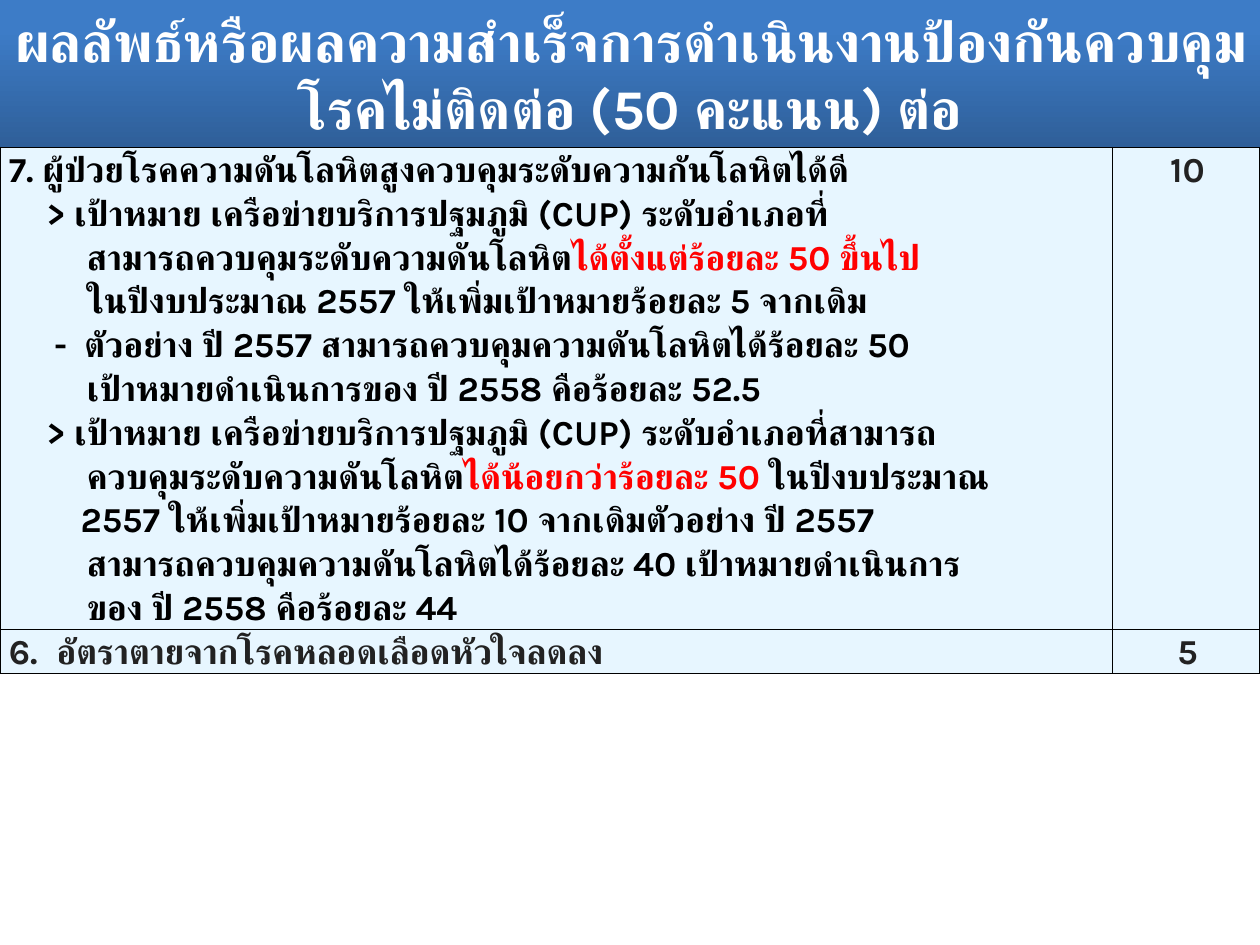
from lxml import etree
from pptx import Presentation, util as u
from pptx.dml.color import RGBColor
from pptx.enum import text
from pptx.oxml import ns

FONT = "Karla"
COLOURS = {"white": "FFFFFF", "black": "000000", "red": "FF0000", "grey": "222222",
           "cell": "E7F6FF", "dark blue": "2F5F99", "blue": "3D7CC7"}


def style_run(run, size, colour):
    run.font.name, run.font.size, run.font.bold = FONT, u.Pt(size), True
    run.font.color.rgb = RGBColor.from_string(COLOURS[colour])
    etree.SubElement(run.font._element, ns.qn("a:cs"), typeface=FONT)


def write_paragraph(paragraph, parts, left, hanging, colour):
    """Fill a table paragraph; every second part is highlighted in red."""
    paragraph.line_spacing = 1.07
    properties = paragraph._p.get_or_add_pPr()
    properties.set("marL", str(u.Inches(left)))
    properties.set("indent", str(-u.Inches(hanging)))
    for index, part in enumerate(parts):
        run = paragraph.add_run()
        run.text = part
        style_run(run, 20, "red" if index % 2 else colour)


presentation = Presentation()
presentation.slide_width, presentation.slide_height = u.Inches(10), u.Inches(7.5)
slide = presentation.slides.add_slide(presentation.slide_layouts[5])

# Title band
title_height = u.Inches(1.17)
title = slide.shapes.title
title.left, title.top = 0, 0
title.width, title.height = presentation.slide_width, title_height
title.shadow.inherit = False
title.fill.gradient()
title.fill.gradient_angle = 90
for stop, position, colour in zip(title.fill.gradient_stops, (0, 0.8), ("dark blue", "blue")):
    stop.position = position
    stop.color.rgb = RGBColor.from_string(COLOURS[colour])
frame = title.text_frame
frame.text = "ผลลัพธ์หรือผลความสำเร็จการดำเนินงานป้องกันควบคุมโรคไม่ติดต่อ (50 คะแนน) ต่อ"
frame.auto_size = text.MSO_AUTO_SIZE.NONE
frame.vertical_anchor = text.MSO_ANCHOR.MIDDLE
frame.paragraphs[0].alignment = text.PP_ALIGN.CENTER
style_run(frame.paragraphs[0].runs[0], 32, "white")

# Criteria and scores: (left indent, hanging indent, parts)
GOAL, BODY, EXAMPLE = (0.3, 0), (0.62, 0), (0.6, 0.24)
criteria = [
    ((0, 0), ["7. ผู้ป่วยโรคความดันโลหิตสูงควบคุมระดับความกันโลหิตได้ดี"]),
    (GOAL, ["> เป้าหมาย เครือข่ายบริการปฐมภูมิ (CUP) ระดับอำเภอที่"]),
    (BODY, ["สามารถควบคุมระดับความดันโลหิต", "ได้ตั้งแต่ร้อยละ 50 ขึ้นไป"]),
    (BODY, ["ในปีงบประมาณ 2557 ให้เพิ่มเป้าหมายร้อยละ 5 จากเดิม"]),
    (EXAMPLE, ["-\tตัวอย่าง ปี 2557 สามารถควบคุมความดันโลหิตได้ร้อยละ 50"]),
    (BODY, ["เป้าหมายดำเนินการของ ปี 2558 คือร้อยละ 52.5"]),
    (GOAL, ["> เป้าหมาย เครือข่ายบริการปฐมภูมิ (CUP) ระดับอำเภอที่สามารถ"]),
    (BODY, ["ควบคุมระดับความดันโลหิต", "ได้น้อยกว่าร้อยละ 50 ", "ในปีงบประมาณ"]),
    ((0.57, 0), ["2557 ให้เพิ่มเป้าหมายร้อยละ 10 จากเดิมตัวอย่าง ปี 2557"]),
    (BODY, ["สามารถควบคุมความดันโลหิตได้ร้อยละ 40 เป้าหมายดำเนินการ"]),
    (BODY, ["ของ ปี 2558 คือร้อยละ 44"]),
]
death_rate = [((0.38, 0.38), ["อัตราตายจากโรคหลอดเลือดหัวใจลดลง"])]
rows = [(3.82, criteria, "black", "10"), (0.35, death_rate, "grey", "5")]

table = slide.shapes.add_table(2, 2, 0, title_height, presentation.slide_width,
                               u.Inches(sum(row[0] for row in rows))).table
table.first_row = table.horz_banding = False
for column, width in zip(table.columns, (8.83, 1.17)):
    column.width = u.Inches(width)

for row_index, (height, lines, colour, score) in enumerate(rows):
    table.rows[row_index].height = u.Inches(height)
    criterion_cell, score_cell = table.rows[row_index].cells
    for cell in (criterion_cell, score_cell):
        cell.margin_left = cell.margin_right = u.Inches(0.07)
        cell.margin_top = cell.margin_bottom = 0
        for side in ("lnL", "lnR", "lnT", "lnB"):
            line = etree.SubElement(cell._tc.get_or_add_tcPr(), ns.qn(f"a:{side}"),
                                    w=str(u.Pt(1)))
            fill = etree.SubElement(line, ns.qn("a:solidFill"))
            etree.SubElement(fill, ns.qn("a:srgbClr"), val=COLOURS["black"])
        cell.fill.solid()
        cell.fill.fore_color.rgb = RGBColor.from_string(COLOURS["cell"])
        # The fill has to follow the borders in the cell properties
        properties = cell._tc.tcPr
        properties.append(properties.find(ns.qn("a:solidFill")))
    frame = criterion_cell.text_frame
    for index, ((left, hanging), parts) in enumerate(lines):
        paragraph = frame.add_paragraph() if index else frame.paragraphs[0]
        write_paragraph(paragraph, parts, left, hanging, colour)
    score_paragraph = score_cell.text_frame.paragraphs[0]
    score_paragraph.alignment = text.PP_ALIGN.CENTER
    write_paragraph(score_paragraph, [score], 0, -0.02, "grey")

# The last criterion is numbered automatically
numbered = table.cell(1, 0).text_frame.paragraphs[0]._p.get_or_add_pPr()
etree.SubElement(numbered, ns.qn("a:buFont"), typeface=FONT)
etree.SubElement(numbered, ns.qn("a:buAutoNum"), type="arabicPeriod", startAt="6")

presentation.save("out.pptx")
